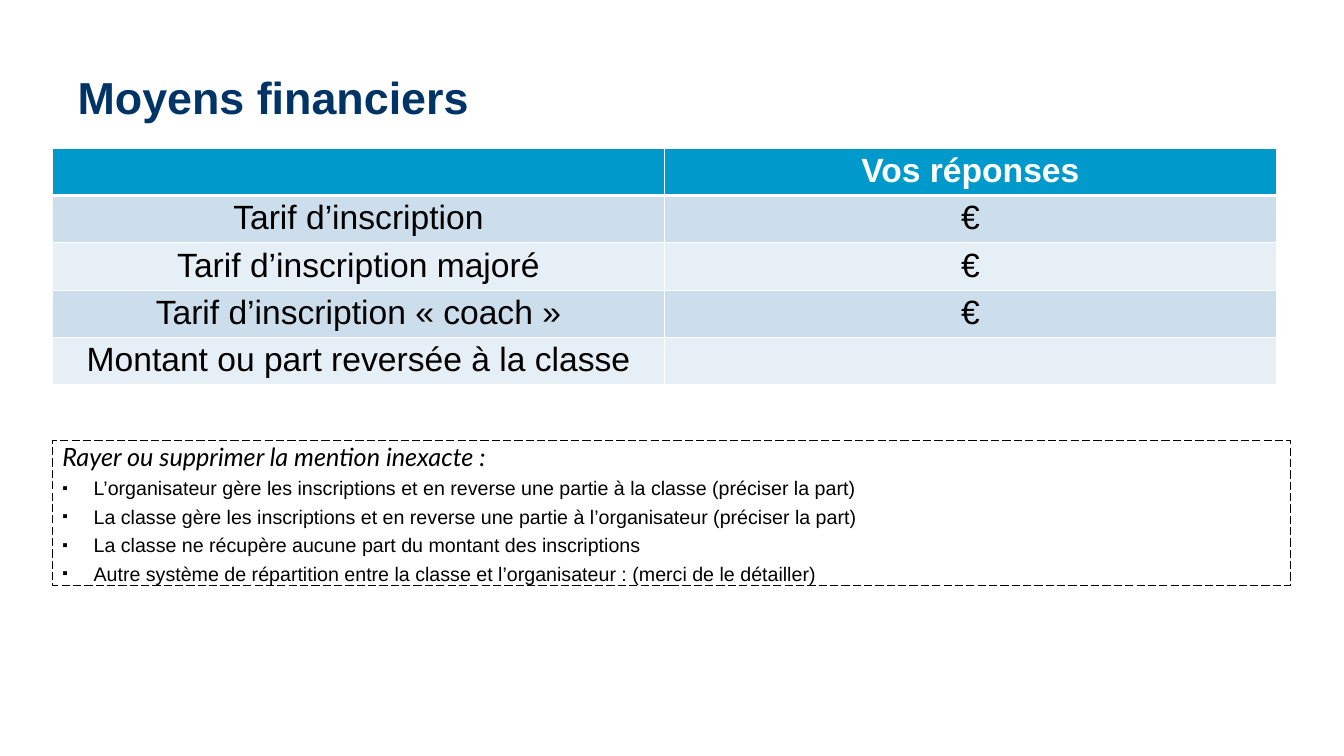
from lxml import etree
from pptx import Presentation
from pptx.dml.color import RGBColor
from pptx.enum.dml import MSO_LINE
from pptx.enum.text import MSO_ANCHOR, PP_ALIGN
from pptx.oxml.ns import qn
from pptx.util import Inches, Pt

CENTER, LEFT = PP_ALIGN.CENTER, PP_ALIGN.LEFT
MIDDLE = MSO_ANCHOR.MIDDLE
DASH = MSO_LINE.LONG_DASH

NAVY, BLUE, WHITE, BLACK = "003366", "0099CC", "FFFFFF", "000000"
BANDS = ["CCDEEC", "E7EFF6"]

ROWS = [
    ("", "Vos réponses"),
    ("Tarif d’inscription", "€"),
    ("Tarif d’inscription majoré", "€"),
    ("Tarif d’inscription « coach »", "€"),
    ("Montant ou part reversée à la classe", ""),
]
CHOICES = [
    "L’organisateur gère les inscriptions et en reverse une partie à la classe (préciser la part)",
    "La classe gère les inscriptions et en reverse une partie à l’organisateur (préciser la part)",
    "La classe ne récupère aucune part du montant des inscriptions",
    "Autre système de répartition entre la classe et l’organisateur : (merci de le détailler)",
]


def color(code):
    return RGBColor.from_string(code)


def style(para, size, code, face="Arial", bold=False, italic=False):
    for item in [para] + list(para.runs):
        font = item.font
        font.name, font.size = face, Pt(size)
        font.bold, font.italic = bold, italic
        font.color.rgb = color(code)


def bullet(para):
    props = para._p.get_or_add_pPr()
    props.set("marL", str(Inches(0.31)))
    props.set("indent", str(-Inches(0.31)))
    etree.SubElement(props, qn("a:buSzPct"), val="80000")
    etree.SubElement(props, qn("a:buFont"), typeface="Arial")
    etree.SubElement(props, qn("a:buChar"), char="▪")


def border(cell, top, bottom):
    props = cell._tc.get_or_add_tcPr()
    for side, width in (("L", 1), ("R", 1), ("T", top), ("B", bottom)):
        line = etree.SubElement(props, qn("a:ln" + side), w=str(Pt(width)))
        fill = etree.SubElement(line, qn("a:solidFill"))
        etree.SubElement(fill, qn("a:srgbClr"), val=WHITE)


def add_title(slide, text):
    title = slide.shapes.title
    title.left, title.top = Inches(0.67), Inches(0.6)
    title.width, title.height = Inches(12), Inches(0.71)
    frame = title.text_frame
    frame.text = text
    frame.vertical_anchor = MIDDLE
    para = frame.paragraphs[0]
    para.alignment = LEFT
    style(para, 32, NAVY, bold=True)


def add_grid(slide, rows):
    high = 0.47
    table = slide.shapes.add_table(
        len(rows), 2, Inches(0.52), Inches(1.47),
        Inches(12.14), Inches(high * len(rows))).table
    table.horz_banding = False
    for i, row in enumerate(rows):
        table.rows[i].height = Inches(high)
        head = i == 0
        for j, text in enumerate(row):
            cell = table.cell(i, j)
            border(cell, 3 if i == 1 else 1, 3 if head else 1)
            cell.fill.solid()
            cell.fill.fore_color.rgb = color(BLUE if head else BANDS[(i - 1) % 2])
            cell.margin_top = cell.margin_bottom = Inches(0.04)
            cell.text_frame.text = text
            para = cell.text_frame.paragraphs[0]
            para.alignment = CENTER
            style(para, 24, WHITE if head else BLACK, bold=head)


def add_note(slide, lead, items):
    box = slide.shapes.add_textbox(
        Inches(0.52), Inches(4.37), Inches(12.28), Inches(1.44))
    box.top, box.height = Inches(4.37), Inches(1.44)
    box.line.color.rgb = color(BLACK)
    box.line.width = Pt(0.75)
    box.line.dash_style = DASH
    frame = box.text_frame
    frame.word_wrap = True
    frame.vertical_anchor = MIDDLE
    frame.margin_top = frame.margin_bottom = Inches(0.02)
    frame.text = lead
    style(frame.paragraphs[0], 18, BLACK, face="Lato", italic=True)
    for item in items:
        para = frame.add_paragraph()
        para.text = item
        para.space_before = Pt(3.5)
        bullet(para)
        style(para, 14, BLACK)


def main():
    deck = Presentation()
    deck.slide_width, deck.slide_height = Inches(13.33), Inches(7.5)
    slide = deck.slides.add_slide(deck.slide_layouts[5])

    # Heading
    add_title(slide, "Moyens financiers")
    # Fees to fill in
    add_grid(slide, ROWS)
    # Options to strike out
    add_note(slide, "Rayer ou supprimer la mention inexacte :", CHOICES)

    deck.save("out.pptx")


if __name__ == "__main__":
    main()
